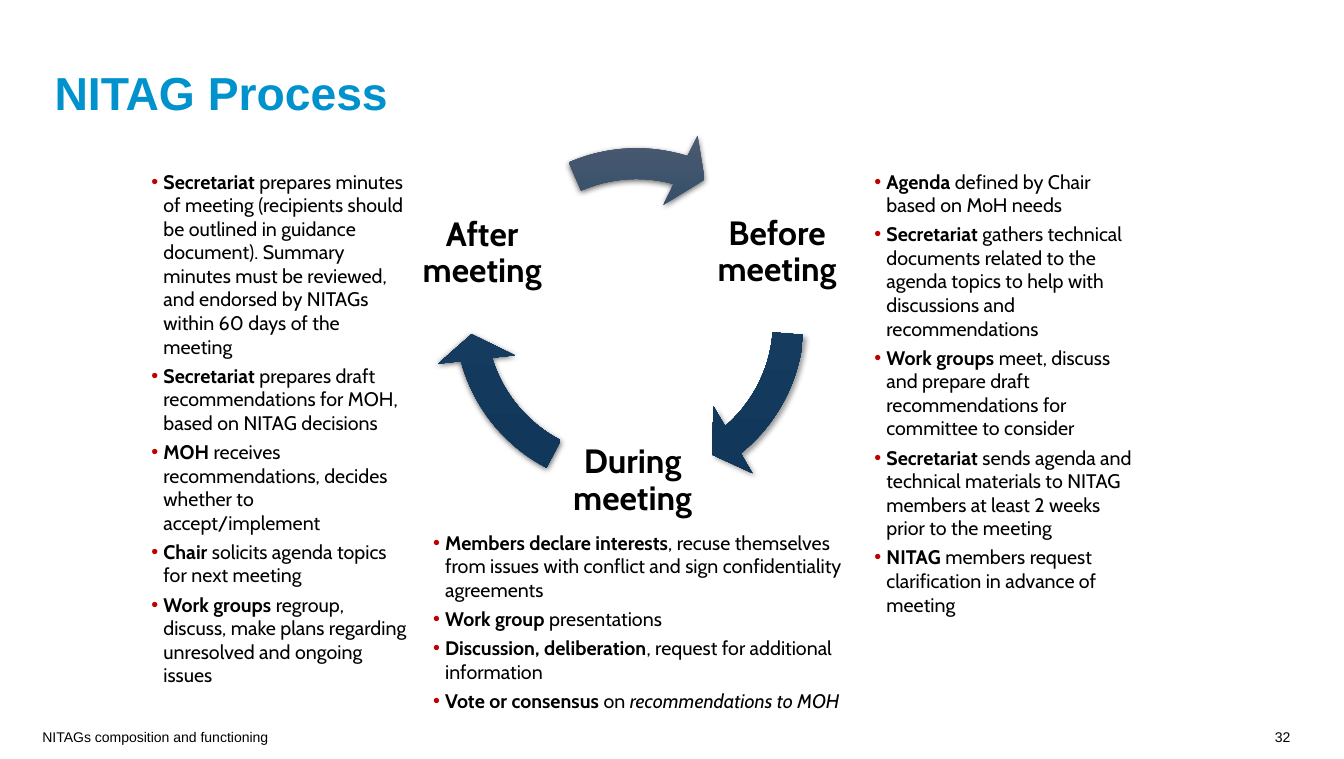
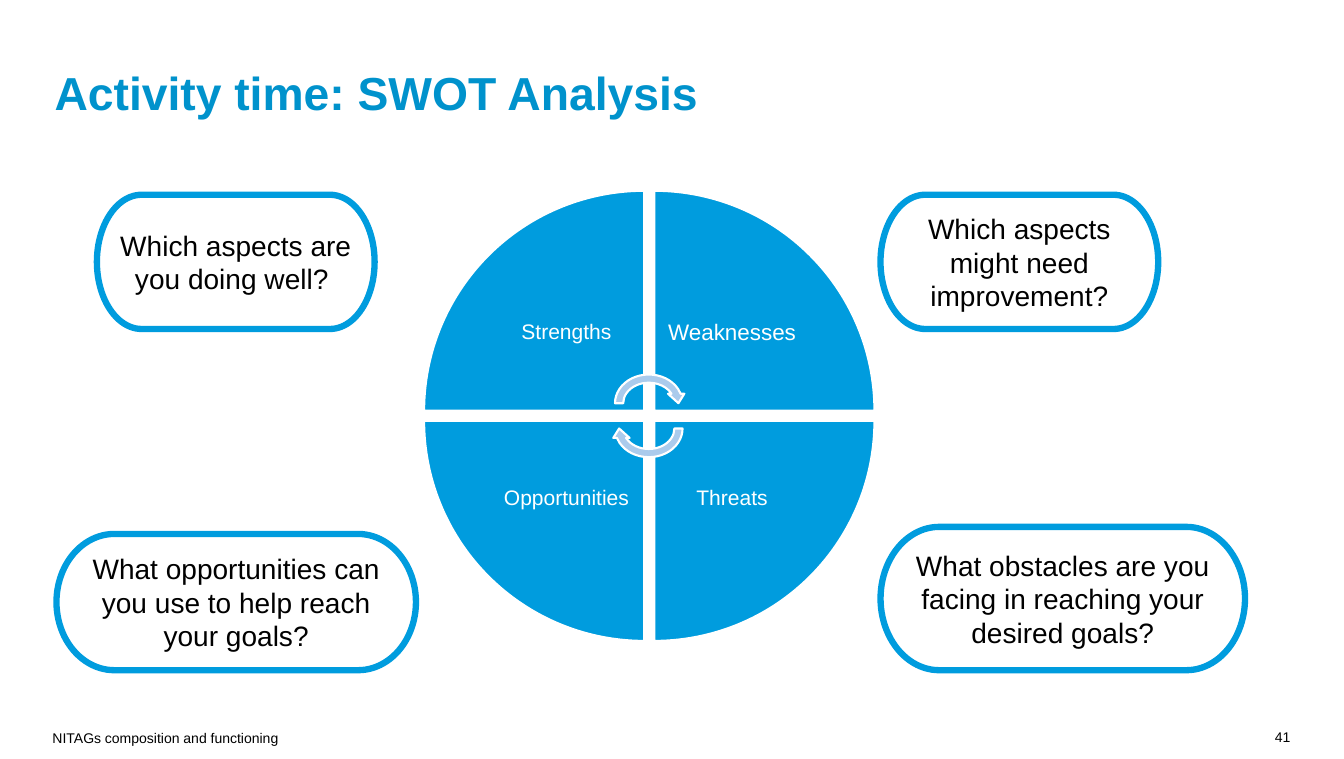
from dataclasses import dataclass
from typing import Any, NamedTuple

from lxml.etree import SubElement
from pptx import Presentation
from pptx.dml.color import RGBColor
from pptx.dml.fill import FillFormat
from pptx.enum.shapes import MSO_SHAPE
from pptx.enum.text import MSO_ANCHOR, MSO_AUTO_SIZE, PP_ALIGN
from pptx.oxml.ns import qn
from pptx.shapes.autoshape import Shape
from pptx.slide import Slide
from pptx.text.text import TextFrame
from pptx.util import Emu, Pt

# Scale (100 px to the inch) and palette
SCALE = 9144
WIDE, HIGH = 1331, 752
BLACK, WHITE, RED = "000000", "FFFFFF", "C00000"
TITLE, BLUE, PALE = "0092CC", "009CDE", "ABCBEC"
BLEND = ((0, "4D5C72"), (50, "153C5F"), (100, "0F3658"))

# Font formats
HEAD = {"name": "Arial", "size": Pt(33), "bold": True}
FOOT = {"name": "Arial", "size": Pt(10)}
STAGE = {"name": "Cabin", "size": Pt(24), "bold": True}
BODY = {"name": "Cabin", "size": Pt(14)}
PROMPT = {"name": "Arial", "size": Pt(20)}
LABEL = {"name": "Arial", "size": Pt(15)}


class Box(NamedTuple):
    x: int
    y: int
    w: int
    h: int


class Item(NamedTuple):
    lead: str
    rest: str
    tail: str = ""


class Shade(NamedTuple):
    alpha: int
    blur: float
    dist: float
    angle: int


@dataclass
class Stage:
    name: str
    x: int
    y: int
    arrow: tuple[int, int]
    end: float
    start: float
    shade: Shade
    list_box: Box
    items: list[Item]


@dataclass
class Part:
    name: str
    col: int
    row: int
    size: int
    ask: str
    box: Box


SOFT, DEEP = Shade(40, 4, 3, 45), Shade(63, 4.5, 1.5, 90)

STAGES = [
    Stage("Before meeting", 689, 170, (438, 128), 30.18, 2.72, SOFT, Box(856, 163, 275, 457), [
        Item("Agenda", " defined by Chair based on MoH needs"),
        Item("Secretariat", " gathers technical documents related to the agenda topics "
             "to help with discussions and recommendations"),
        Item("Work groups ", "meet, discuss and prepare draft recommendations "
             "for committee to consider"),
        Item("Secretariat", " sends agenda and technical materials to NITAG members "
             "at least 2 weeks prior to the meeting"),
        Item("NITAG ", "members request clarification in advance of meeting"),
    ]),
    Stage("During meeting", 546, 396, (428, 124), 98.48, 70.46, DEEP, Box(419, 521, 433, 192), [
        Item("Members declare interests", ", recuse themselves from issues with conflict "
             "and sign confidentiality agreements"),
        Item("Work group ", "presentations"),
        Item("Discussion, deliberation", ", request for additional information"),
        Item("Vote or consensus ", "on ", "recommendations to MOH"),
    ]),
    Stage("After meeting", 397, 171, (440, 124), 171.96, 147.82, DEEP, Box(140, 163, 275, 486), [
        Item("Secretariat", " prepares minutes of meeting (recipients should be outlined "
             "in guidance document). Summary minutes must be reviewed, and endorsed "
             "by NITAGs within 60 days of the meeting"),
        Item("Secretariat", " prepares draft recommendations for MOH, "
             "based on NITAG decisions"),
        Item("MOH", " receives recommendations, decides whether to accept/implement"),
        Item("Chair", " solicits agenda topics for next meeting"),
        Item("Work groups", " regroup, discuss, make plans regarding unresolved "
             "and ongoing issues"),
    ]),
]

# Clockwise from top left
PARTS = [
    Part("Strengths", 0, 0, 15, "Which aspects are you doing well? ", Box(96, 193, 275, 133)),
    Part("Weaknesses", 1, 0, 16, "Which aspects might need improvement?", Box(872, 193, 275, 133)),
    Part("Threats", 1, 1, 15, "What obstacles are you facing in reaching your desired goals?",
         Box(872, 522, 361, 142)),
    Part("Opportunities", 0, 1, 15, "What opportunities can you use to help reach your goals?",
         Box(56, 529, 356, 135)),
]


def px(count: int) -> Emu:
    return Emu(count * SCALE)


def paint(fill: FillFormat, hue: str) -> None:
    fill.solid()
    fill.fore_color.rgb = RGBColor.from_string(hue)


def style(target: Any, form: dict[str, Any]) -> None:
    for key, value in form.items():
        setattr(target, key, value)


def write(para: Any, text: str, form: dict[str, Any], hue: str = BLACK) -> None:
    run = para.add_run()
    run.text = text
    style(run.font, form)
    paint(run.font.fill, hue)


def setup(frame: TextFrame, inset: tuple[int, int, int, int], anchor: MSO_ANCHOR) -> None:
    left, top, right, base = map(px, inset)
    style(frame, {"word_wrap": True, "vertical_anchor": anchor, "margin_left": left,
                  "margin_top": top, "margin_right": right, "margin_bottom": base})


def text_box(slide: Slide, box: Box, inset: tuple[int, int, int, int] = (0, 0, 0, 0),
             anchor: MSO_ANCHOR = MSO_ANCHOR.TOP) -> TextFrame:
    frame = slide.shapes.add_textbox(*map(px, box)).text_frame
    setup(frame, inset, anchor)
    return frame


def label(slide: Slide, box: Box, text: str, form: dict[str, Any], pad: int, hue: str) -> None:
    para = text_box(slide, box, (pad,) * 4, MSO_ANCHOR.MIDDLE).paragraphs[0]
    style(para, {"alignment": PP_ALIGN.CENTER, "line_spacing": 0.9})
    write(para, text, form, hue)


def add_form(slide: Slide, kind: MSO_SHAPE, box: Box, hue: str,
             edge: str, width: float, turn: int = 0) -> Shape:
    shape = slide.shapes.add_shape(kind, *map(px, box))
    shape.rotation = turn
    paint(shape.fill, hue)
    paint(shape.line.fill, edge)
    shape.line.width = Pt(width)
    shape.shadow.inherit = False
    return shape


def add_hue(node: Any, hue: str) -> Any:
    return SubElement(node, qn("a:srgbClr"), val=hue)


def bullets(slide: Slide, box: Box, items: list[Item]) -> None:
    frame = text_box(slide, box, (10, 5, 10, 5))
    frame.auto_size = MSO_AUTO_SIZE.SHAPE_TO_FIT_TEXT
    for rank, item in enumerate(items):
        para = frame.add_paragraph() if rank else frame.paragraphs[0]
        props = para._p.get_or_add_pPr()
        props.set("marL", str(px(12)))
        props.set("indent", str(px(-12)))
        add_hue(SubElement(props, qn("a:buClr")), RED)
        SubElement(props, qn("a:buFont"), typeface="Arial")
        SubElement(props, qn("a:buChar"), char="•")
        if rank:
            para.space_before = Pt(4)
        write(para, item.lead, BODY | {"bold": True})
        write(para, item.rest, BODY)
        if item.tail:
            write(para, item.tail, BODY | {"italic": True})


def cycle_arrow(slide: Slide, stage: Stage) -> None:
    shape = slide.shapes.add_shape(MSO_SHAPE.CIRCULAR_ARROW,
                                   *map(px, Box(*stage.arrow, 381, 381)))
    for rank, value in enumerate((0.08, 5.76, stage.end, stage.start, 0.1)):
        shape.adjustments[rank] = value
    shape.line.fill.background()

    # Three-stop gradient, top to bottom
    shape.fill.gradient()
    shape.fill.gradient_angle = 270
    stops = shape._element.spPr.find(qn("a:gradFill")).find(qn("a:gsLst"))
    for stop in list(stops):
        stops.remove(stop)
    for place, hue in BLEND:
        add_hue(SubElement(stops, qn("a:gs"), pos=str(place * 1000)), hue)

    # Soft shadow
    shape.shadow.inherit = False
    shade = stage.shade
    cast = SubElement(shape._element.spPr.find(qn("a:effectLst")), qn("a:outerShdw"),
                      blurRad=str(Pt(shade.blur)), dist=str(Pt(shade.dist)),
                      dir=str(shade.angle * 60000), rotWithShape="0")
    SubElement(add_hue(cast, BLACK), qn("a:alpha"), val=str(shade.alpha * 1000))


def new_slide(deck: Any, title: str, number: int, spot: tuple[int, int]) -> Slide:
    slide = deck.slides.add_slide(deck.slide_layouts[6])
    note = text_box(slide, Box(*spot, 247, 20)).paragraphs[0]
    write(note, "NITAGs composition and functioning", FOOT)
    page = text_box(slide, Box(1246, 722, 32, 20)).paragraphs[0]
    page.alignment = PP_ALIGN.RIGHT
    write(page, str(number), FOOT)
    head = text_box(slide, Box(52, 40, 891, 79), (2, 0, 47, 0), MSO_ANCHOR.BOTTOM).paragraphs[0]
    head.line_spacing = 0.9
    write(head, title, HEAD, TITLE)
    return slide


def process(deck: Any) -> None:
    slide = new_slide(deck, "NITAG Process", 32, (42, 722))
    for stage in STAGES:
        label(slide, Box(stage.x, stage.y, 161, 161), stage.name, STAGE, 3, BLACK)
        cycle_arrow(slide, stage)
        bullets(slide, stage.list_box, stage.items)


def swot(deck: Any) -> None:
    slide = new_slide(deck, "Activity time: SWOT Analysis", 41, (52, 723))
    left, top, side, pitch, inner = 420, 189, 218, 228, 154

    # Quarter wedges with labels toward the centre
    for rank, part in enumerate(PARTS):
        x, y = left + part.col * pitch, top + part.row * pitch
        add_form(slide, MSO_SHAPE.PIE_WEDGE, Box(x, y, side, side), BLUE, WHITE, 1.5, rank * 90)
        shift = side - inner
        spot = Box(x + shift * (1 - part.col), y + shift * (1 - part.row), inner, inner)
        label(slide, spot, part.name, LABEL | {"size": Pt(part.size)}, 12, WHITE)

    # Turning arrows
    for y, turn in ((367, 0), (392, 180)):
        add_form(slide, MSO_SHAPE.CIRCULAR_ARROW, Box(605, y, 75, 65), PALE, WHITE, 1.5, turn)

    # Question bubbles
    for part in PARTS:
        shape = add_form(slide, MSO_SHAPE.FLOWCHART_TERMINATOR, part.box, WHITE, BLUE, 4.5)
        setup(shape.text_frame, (10, 5, 10, 5), MSO_ANCHOR.MIDDLE)
        para = shape.text_frame.paragraphs[0]
        para.alignment = PP_ALIGN.CENTER
        write(para, part.ask, PROMPT)


def main() -> None:
    deck = Presentation()
    deck.slide_width, deck.slide_height = px(WIDE), px(HIGH)
    process(deck)
    swot(deck)
    deck.save("out.pptx")


if __name__ == "__main__":
    main()
